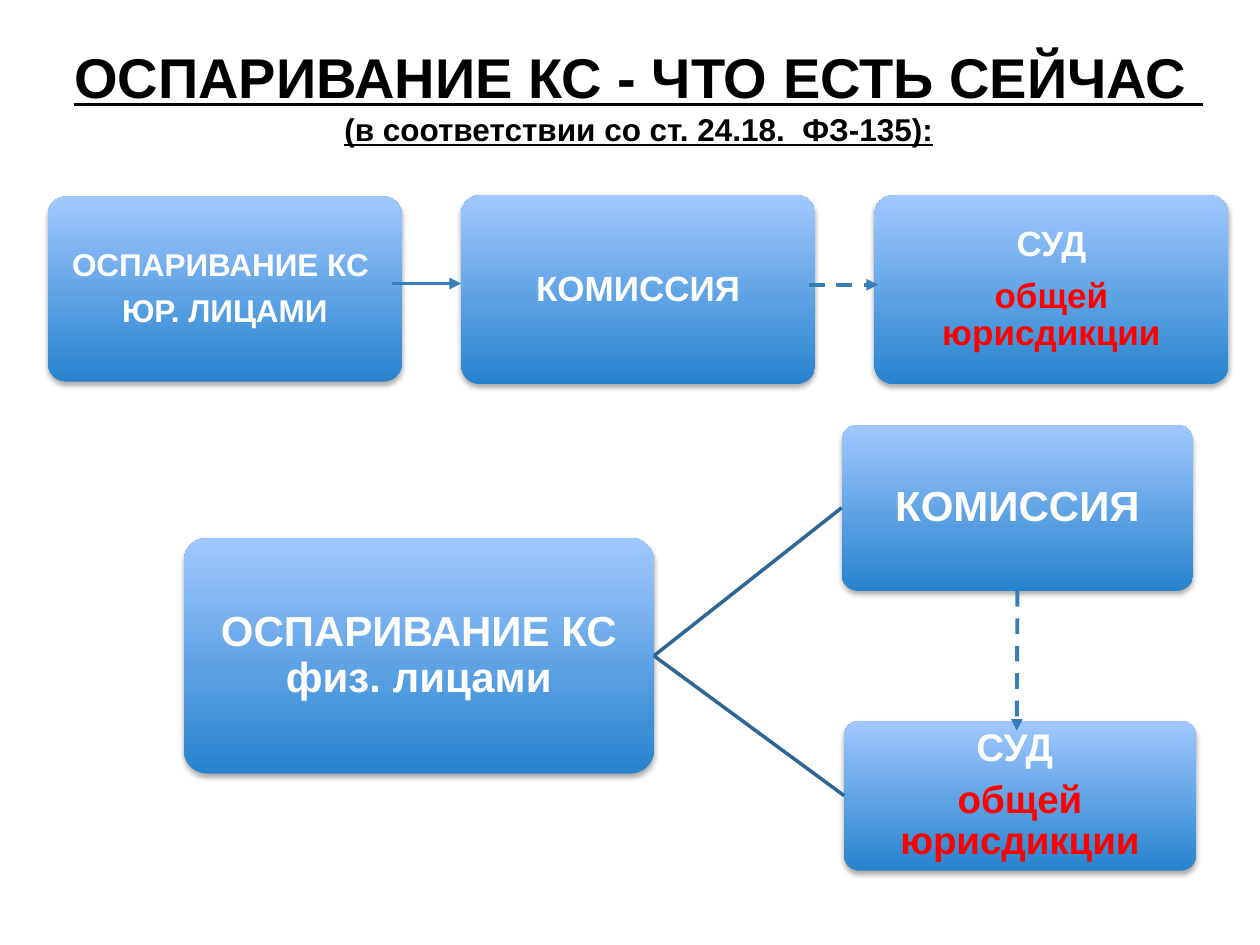
from lxml import etree
from pptx import Presentation
from pptx.dml.color import RGBColor
from pptx.enum import dml, shapes, text
from pptx.oxml import parse_xml
from pptx.oxml.ns import nsdecls, qn
from pptx.util import Inches, Pt

COLUMNS, ROWS = 100, 75
TOP, LEFT, BOTTOM, RIGHT = range(4)
SHADOW = (
    f'<a:effectLst {nsdecls("a")}>'
    '<a:outerShdw blurRad="40000" dist="23000" dir="5400000" rotWithShape="0">'
    '<a:srgbClr val="000000"><a:alpha val="35000"/></a:srgbClr>'
    '</a:outerShdw></a:effectLst>'
)


def color(value):
    return RGBColor.from_string(value)


def write(frame, content, size, ink="FFFFFF", underline=False, spacing=None, after=0):
    para = frame.paragraphs[0]
    if para.runs:
        para = frame.add_paragraph()
    para.alignment = text.PP_ALIGN.CENTER
    para.line_spacing = spacing
    para.space_after = Pt(after)
    span = para.add_run()
    span.text = content
    font = span.font
    font.name, font.size, font.bold, font.underline = "Arial", Pt(size), True, underline
    font.color.rgb = color(ink)


class Diagram:
    light, dark = "A0C8FF", "2783CD"
    arrow_ink, branch_ink, accent = "367EB9", "2E6795", "FF0000"

    def __init__(self, deck):
        self.page = deck.slides.add_slide(deck.slide_layouts[6])
        self.column = deck.slide_width / COLUMNS
        self.row = deck.slide_height / ROWS

    def place(self, x, y):
        return round(x * self.column), round(y * self.row)

    def title(self, x, y, width, height, lines):
        box = self.page.shapes.add_textbox(*self.place(x, y), *self.place(width, height))
        box.text_frame.word_wrap = True
        for content, size in lines:
            write(box.text_frame, content, size, ink="000000", underline=True)

    def box(self, x, y, width, height, lines, size, inset, after):
        box = self.page.shapes.add_shape(
            shapes.MSO_SHAPE.ROUNDED_RECTANGLE,
            *self.place(x, y), *self.place(width, height))
        box.adjustments[0] = 0.1
        box.fill.gradient()
        box.fill.gradient_angle = 90
        for stop, position, shade in zip(
                box.fill.gradient_stops, (0, 1), (self.dark, self.light)):
            stop.position = position
            stop.color.rgb = color(shade)
        box.line.fill.background()
        box._element.spPr.append(parse_xml(SHADOW))
        frame = box.text_frame
        frame.word_wrap = True
        frame.vertical_anchor = text.MSO_ANCHOR.MIDDLE
        frame.margin_left = frame.margin_right = Inches(inset)
        frame.margin_top = frame.margin_bottom = Inches(inset)
        for content, ink in zip(lines, ("FFFFFF", self.accent)):
            write(frame, content, size, ink=ink, spacing=0.9, after=after)
        return box

    def line(self, start, end, ink, width):
        line = self.page.shapes.add_connector(
            shapes.MSO_CONNECTOR.STRAIGHT, *self.place(*start), *self.place(*end))
        line.line.color.rgb = color(ink)
        line.line.width = Pt(width)
        etree.SubElement(line._element.spPr, qn("a:effectLst"))
        return line

    def arrow(self, start, end, dashed=False):
        line = self.line(start, end, self.arrow_ink, 2.25)
        if dashed:
            line.line.dash_style = dml.MSO_LINE.DASH
        etree.SubElement(line.line._get_or_add_ln(), qn("a:tailEnd"), type="triangle")
        return line

    def branch(self, source, target):
        line = self.line((0, 0), (1, 1), self.branch_ink, 2)
        line.begin_connect(source, RIGHT)
        line.end_connect(target, LEFT)


def main():
    deck = Presentation()
    deck.slide_width, deck.slide_height = Inches(10), Inches(7.5)
    diagram = Diagram(deck)

    commission = ["КОМИССИЯ"]
    court = ["СУД", "общей юрисдикции"]

    lower = {"inset": 0.02, "after": 6}
    person = diagram.box(14.6, 42.7, 37.3, 18.7, ["ОСПАРИВАНИЕ КС физ. лицами"], 24, **lower)
    upper_choice = diagram.box(66.8, 33.7, 27.9, 13.2, commission, 24, **lower)
    lower_choice = diagram.box(67, 57.2, 27.9, 11.9, ["СУД ", court[1]], 22, **lower)
    for choice in (upper_choice, lower_choice):
        diagram.branch(person, choice)
    descent = diagram.arrow((80.7, 46.9), (80.7, 58), dashed=True)
    descent.begin_connect(upper_choice, BOTTOM)

    left, pitch, width = 3.8, 32.8, 28.1
    company = diagram.box(left, 15.6, width, 14.7, ["ОСПАРИВАНИЕ КС "], 18, 0.07, 7)
    write(company.text_frame, "ЮР. ЛИЦАМИ", 18, spacing=0.9, after=7)
    for step, lines in enumerate((commission, court), 1):
        diagram.box(left + step * pitch, 15.5, width, 15, lines, 20, 0.08, 8)
    diagram.arrow((31.1, 22.5), (36.6, 22.5))
    diagram.arrow((64.2, 22.6), (69.7, 22.6), dashed=True)

    diagram.title(1.3, 2.9, 98.8, 9.4, [
        ("ОСПАРИВАНИЕ КС - ЧТО ЕСТЬ СЕЙЧАС ", 32),
        ("(в соответствии со ст. 24.18.  ФЗ-135):", 18),
    ])
    deck.save("out.pptx")


if __name__ == "__main__":
    main()
